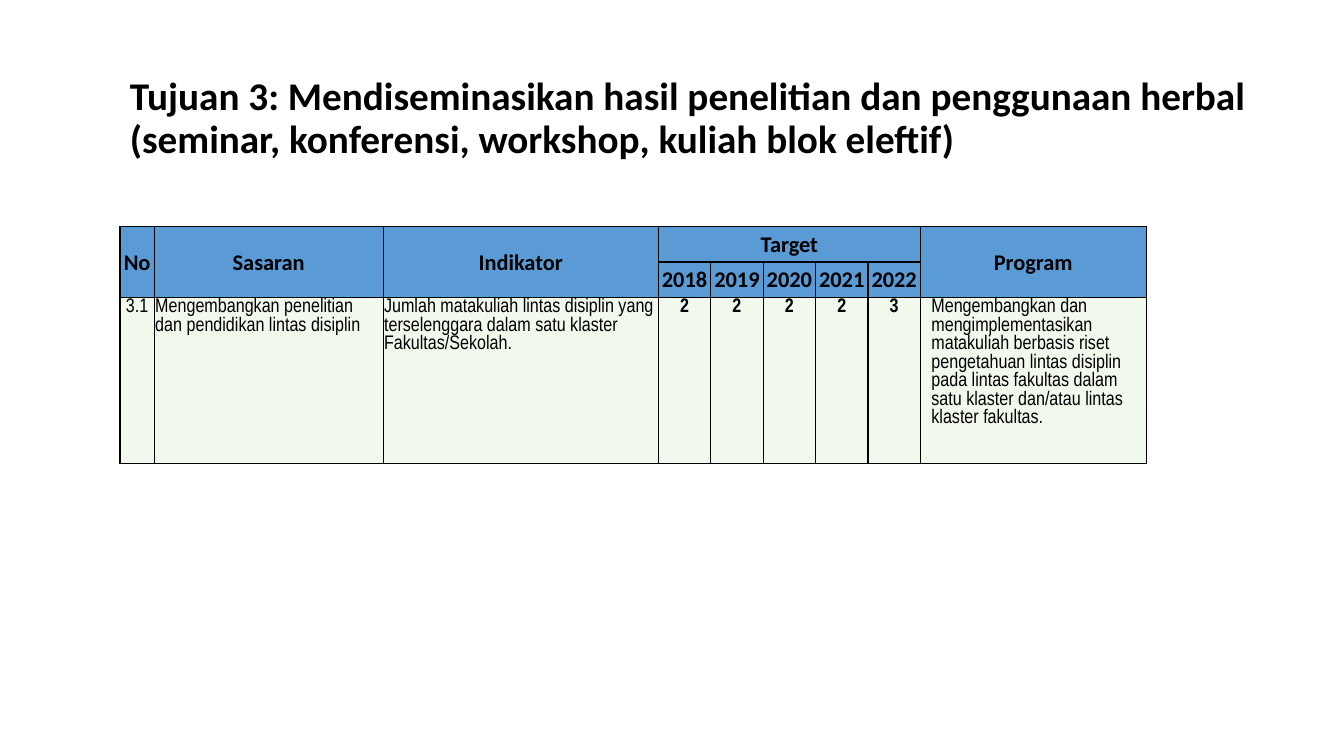
from lxml.etree import SubElement
from pptx import Presentation
from pptx.dml.color import RGBColor
from pptx.enum.text import MSO_ANCHOR, PP_ALIGN
from pptx.oxml.ns import qn
from pptx.util import Inches, Pt

COLORS = {"text": "000000", "border": "000000", "header": "5B9BD5", "body": "F1F8EC"}
HEADING = "Calibri"
BODY = "Arial Narrow"
TITLE = ("Tujuan 3: Mendiseminasikan hasil penelitian dan penggunaan herbal "
         "(seminar, konferensi, workshop, kuliah blok eleftif)")
TARGETS = {"2018": "2", "2019": "2", "2020": "2", "2021": "2", "2022": "3"}
SIDE_COLUMNS = {0: "No", 1: "Sasaran", 2: "Indikator", 8: "Program"}
FIRST_TARGET, LAST_TARGET = 3, 7
COLUMN_WIDTHS = [0.34, 2.27, 2.73] + [0.52] * len(TARGETS) + [2.24]
ROW_HEIGHTS = [0.35, 0.35, 1.3]
GOAL = [
    "3.1",
    "Mengembangkan penelitian dan pendidikan lintas disiplin",
    "Jumlah matakuliah lintas disiplin yang terselenggara dalam satu klaster Fakultas/Sekolah.",
    *TARGETS.values(),
    "Mengembangkan dan mengimplementasikan matakuliah berbasis riset pengetahuan "
    "lintas disiplin pada lintas fakultas dalam satu klaster dan/atau lintas klaster fakultas.",
]


def set_font(p, name, size, bold):
    p.font.name = name
    p.font.size = Pt(size)
    p.font.bold = bold
    p.font.color.rgb = RGBColor.from_string(COLORS["text"])


def set_margins(box, left, top, right, bottom):
    box.margin_left, box.margin_top = Inches(left), Inches(top)
    box.margin_right, box.margin_bottom = Inches(right), Inches(bottom)


def style_cell(cell, fill):
    tcPr = cell._tc.get_or_add_tcPr()
    for side in ("a:lnL", "a:lnR", "a:lnT", "a:lnB"):
        ln = SubElement(tcPr, qn(side), w=str(Pt(1)))
        color = SubElement(ln, qn("a:solidFill"))
        SubElement(color, qn("a:srgbClr"), val=COLORS["border"])
    cell.fill.solid()
    cell.fill.fore_color.rgb = RGBColor.from_string(COLORS[fill])
    set_margins(cell, 0.01, 0.01, 0.01, 0)


def write_header(cell, text):
    cell.vertical_anchor = MSO_ANCHOR.MIDDLE
    p = cell.text_frame.paragraphs[0]
    p.text = text
    p.alignment = PP_ALIGN.CENTER
    set_font(p, HEADING, 16, True)


def write_body(cell, text, column):
    is_target = FIRST_TARGET <= column <= LAST_TARGET
    p = cell.text_frame.paragraphs[0]
    p.text = text
    p.alignment = PP_ALIGN.CENTER if is_target or column == 0 else PP_ALIGN.LEFT
    if is_target:
        set_margins(cell, 0.07, 0, 0.07, 0)
        p.line_spacing = 1.07
    elif column > LAST_TARGET:
        p._p.get_or_add_pPr().set("marL", str(Inches(0.1)))
    set_font(p, BODY, 14, is_target)


def add_title(s, left, top, width, height):
    tf = s.shapes.add_textbox(Inches(left), Inches(top), Inches(width), Inches(height)).text_frame
    tf.word_wrap = True
    tf.vertical_anchor = MSO_ANCHOR.MIDDLE
    p = tf.paragraphs[0]
    p.text = TITLE
    p.line_spacing = 0.9
    set_font(p, HEADING, 28, True)


def add_goal_table(s, left, top):
    table = s.shapes.add_table(
        len(ROW_HEIGHTS), len(COLUMN_WIDTHS), Inches(left), Inches(top),
        Inches(sum(COLUMN_WIDTHS)), Inches(sum(ROW_HEIGHTS))).table
    for column, width in zip(table.columns, COLUMN_WIDTHS):
        column.width = Inches(width)
    for r, height in enumerate(ROW_HEIGHTS):
        table.rows[r].height = Inches(height)
        for c in range(len(COLUMN_WIDTHS)):
            style_cell(table.cell(r, c), "header" if r < 2 else "body")
    for c, text in SIDE_COLUMNS.items():
        table.cell(0, c).merge(table.cell(1, c))
        write_header(table.cell(0, c), text)
    table.cell(0, FIRST_TARGET).merge(table.cell(0, LAST_TARGET))
    write_header(table.cell(0, FIRST_TARGET), "Target")
    for c, year in enumerate(TARGETS, FIRST_TARGET):
        write_header(table.cell(1, c), year)
    for c, text in enumerate(GOAL):
        write_body(table.cell(2, c), text, c)


def main():
    prs = Presentation()
    prs.slide_width, prs.slide_height = Inches(13.33), Inches(7.5)
    s = prs.slides.add_slide(prs.slide_layouts[6])
    add_title(s, 1.19, 0.83, 11.5, 0.71)
    add_goal_table(s, 1.19, 2.25)
    prs.save("out.pptx")


if __name__ == "__main__":
    main()
